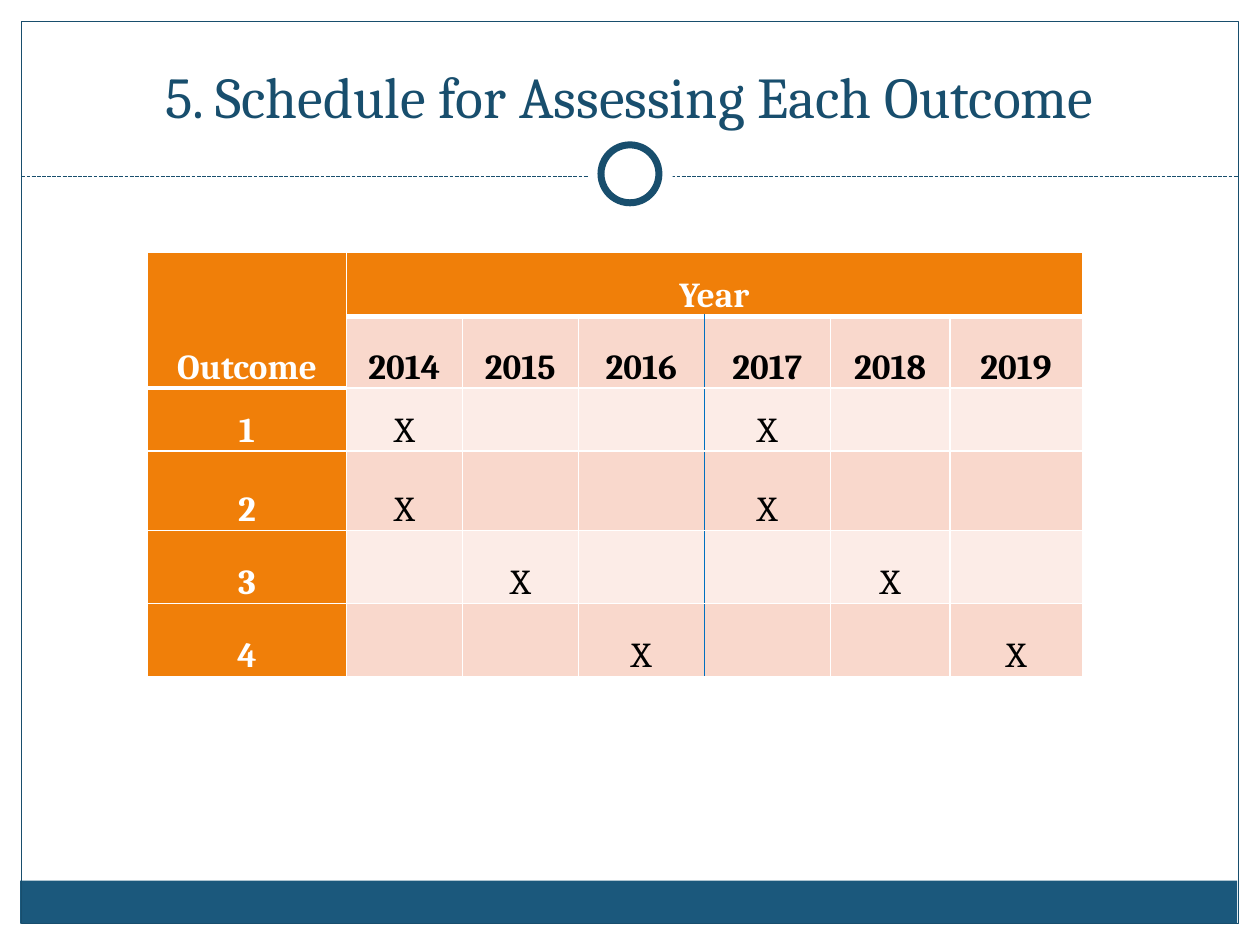
from pptx import Presentation
from pptx.dml.color import RGBColor
from pptx.enum.dml import MSO_LINE as Dash
from pptx.enum.shapes import MSO_CONNECTOR as Wire, MSO_SHAPE as Form
from pptx.enum.text import MSO_ANCHOR as Anchor, PP_ALIGN as Align
from pptx.oxml.ns import qn
from pptx.util import Inches, Pt
from lxml.etree import SubElement

TITLE = "5. Schedule for Assessing Each Outcome"
ROWS = [
    ["Outcome", "Year", "", "", "", "", ""],
    ["", "2014", "2015", "2016", "2017", "2018", "2019"],
    ["1", "X", "", "", "X", "", ""],
    ["2", "X", "", "", "X", "", ""],
    ["3", "", "X", "", "", "X", ""],
    ["4", "", "", "X", "", "", "X"],
]
WIDTHS = [1.58, 0.92, 0.92, 1, 1, 0.95, 1.05]
HEIGHTS = [0.51, 0.57, 0.5, 0.63, 0.58, 0.58]
SPLIT = 4
FONT = "Cambria"
WHITE, BLACK, NAVY, BAR = "FFFFFF", "000000", "184E6D", "1B587C"
ORANGE, ROSE, PALE, BLUE = "F07F09", "F9D8CC", "FCECE7", "0070C0"
DECOR = [
    (Form.RECTANGLE, (0, 0, 10, 1.52), WHITE, 0),
    (Form.RECTANGLE, (0, 0, 0.17, 7.5), WHITE, 0),
    (Form.RECTANGLE, (9.83, 0, 0.17, 7.5), WHITE, 0),
    (Form.RECTANGLE, (0.16, 6.99, 9.66, 0.34), BAR, 0),
    (Form.RECTANGLE, (0.17, 0.17, 9.66, 7.16), None, 0.75),
]
RING = [
    (Form.OVAL, (4.67, 1.05, 0.67, 0.67), WHITE, 0),
    (Form.OVAL, (4.77, 1.15, 0.46, 0.46), WHITE, 4),
]


def paint(fill, tone):
    fill.solid()
    fill.fore_color.rgb = RGBColor.from_string(tone)


def style(font, size, tone, bold=False):
    font.name, font.size, font.bold = FONT, Pt(size), bold
    font.color.rgb = RGBColor.from_string(tone)


def draw(slide, parts):
    for form, box, tone, line in parts:
        shape = slide.shapes.add_shape(form, *map(Inches, box))
        shape.shadow.inherit = False
        if tone:
            paint(shape.fill, tone)
        else:
            shape.fill.background()
        if line:
            paint(shape.line.fill, NAVY)
            shape.line.width = Pt(line)
        else:
            shape.line.fill.background()


def rule(slide):
    line = slide.shapes.add_connector(
        Wire.STRAIGHT, *map(Inches, (0.17, 1.4, 9.83, 1.4)))
    paint(line.line.fill, NAVY)
    line.line.width = Pt(0.75)
    line.line.dash_style = Dash.SQUARE_DOT
    SubElement(line.element.spPr, qn("a:effectLst"))


def head(slide):
    title = slide.shapes.title
    title.left, title.top, title.width, title.height = map(
        Inches, (0.33, 0.25, 9.33, 0.83))
    frame = title.text_frame
    frame.text = TITLE
    frame.vertical_anchor = Anchor.BOTTOM
    para = frame.paragraphs[0]
    para.alignment = Align.CENTER
    style(para.runs[0].font, 33, NAVY)
    slide.shapes.element.append(title.element)


def heavy(row, col):
    return row == 0 and col > 0 or row == 1 and col == 0


def edge(cell, row, col):
    props = cell._tc.get_or_add_tcPr()
    sides = {
        "L": (BLUE if row and col == SPLIT else WHITE, 1),
        "R": (BLUE if row and col == SPLIT - 1 else WHITE, 1),
        "T": (WHITE, 3 if heavy(row - 1, col) else 1),
        "B": (WHITE, 3 if heavy(row, col) or row + col == 0 else 1),
    }
    for side, (tone, size) in sides.items():
        line = SubElement(props, qn("a:ln" + side), w=str(Pt(size)))
        fill = SubElement(line, qn("a:solidFill"))
        SubElement(fill, qn("a:srgbClr"), val=tone)


def write(cell, text, row, col):
    label = row == 0 or col == 0
    edge(cell, row, col)
    paint(cell.fill, ORANGE if label else ROSE if row % 2 else PALE)
    cell.vertical_anchor = Anchor.BOTTOM
    cell.margin_left = cell.margin_right = Inches(0.07)
    cell.margin_top = cell.margin_bottom = 0
    cell.text_frame.text = text
    para = cell.text_frame.paragraphs[0]
    para.alignment, para.line_spacing = Align.CENTER, 1.15
    for run in para.runs:
        style(run.font, 20, WHITE if label else BLACK, label or row == 1)


def grid(slide):
    box = (1.17, 2, sum(WIDTHS), sum(HEIGHTS))
    table = slide.shapes.add_table(
        len(ROWS), len(WIDTHS), *map(Inches, box)).table
    for col, width in zip(table.columns, WIDTHS):
        col.width = Inches(width)
    for row, height in zip(table.rows, HEIGHTS):
        row.height = Inches(height)
    for r, texts in enumerate(ROWS):
        for c, text in enumerate(texts):
            write(table.cell(r, c), text, r, c)
    table.cell(0, 0).merge(table.cell(1, 0))
    table.cell(0, 1).merge(table.cell(0, len(WIDTHS) - 1))


def main():
    deck = Presentation()
    deck.slide_width, deck.slide_height = Inches(10), Inches(7.5)
    slide = deck.slides.add_slide(deck.slide_layouts[5])
    paint(slide.background.fill, WHITE)
    draw(slide, DECOR)
    rule(slide)
    draw(slide, RING)
    head(slide)
    grid(slide)
    deck.save("out.pptx")


if __name__ == "__main__":
    main()
